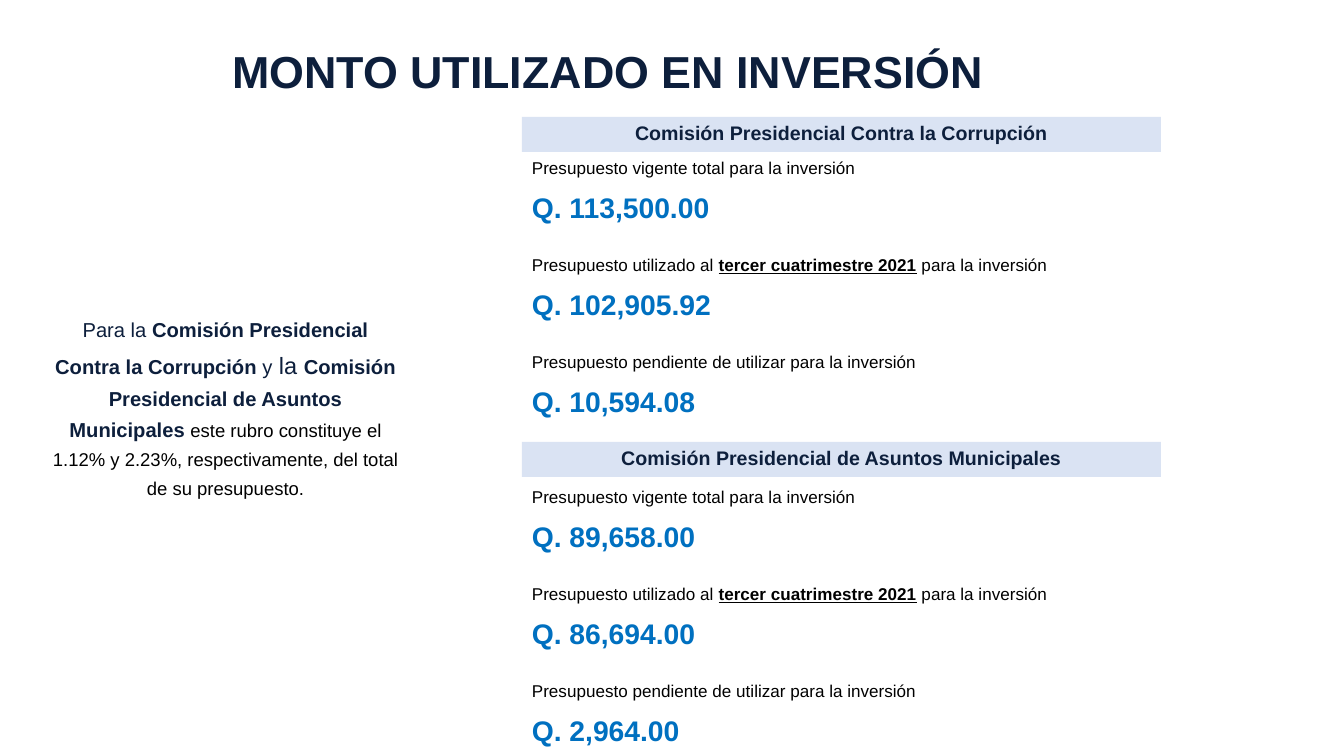
"""Build the slide on the amounts spent on investment by two commissions."""
from dataclasses import dataclass

from pptx import Presentation
from pptx.dml.color import RGBColor
from pptx.enum.shapes import MSO_SHAPE
from pptx.enum.text import MSO_ANCHOR, MSO_AUTO_SIZE, PP_ALIGN
from pptx.util import Pt

EMU_PER_PX = 914400 / 100.8
RECTANGLE = MSO_SHAPE.RECTANGLE
TOP, MIDDLE = MSO_ANCHOR.TOP, MSO_ANCHOR.MIDDLE
NO_AUTOFIT = MSO_AUTO_SIZE.NONE
CENTER, JUSTIFY = PP_ALIGN.CENTER, PP_ALIGN.JUSTIFY
TITLE_ONLY = 5
NAVY, BLUE, BLACK, BAND = "0D1F3C", "0070C0", "000000", "DAE3F3"
COLUMN_LEFT = 522


@dataclass
class Span:
    text: str
    size: float
    color: str = BLACK
    bold: bool = False
    underline: bool = False


@dataclass
class Commission:
    name: str
    band_top: int
    figures_top: int
    amounts: tuple[str, str, str]


LABELS = (
    [Span("Presupuesto vigente total para la inversión", 12.2)],
    [
        Span("Presupuesto utilizado al ", 12.2),
        Span("tercer cuatrimestre 2021", 12.2, bold=True, underline=True),
        Span(" para la inversión", 12.2),
    ],
    [Span("Presupuesto pendiente de utilizar para la inversión", 12.2)],
)
COMMISSIONS = (
    Commission("Comisión Presidencial Contra la Corrupción", 117, 146,
               ("Q. 113,500.00", "Q. 102,905.92", "Q. 10,594.08")),
    Commission("Comisión Presidencial de Asuntos Municipales", 442, 475,
               ("Q. 89,658.00", "Q. 86,694.00", "Q. 2,964.00")),
)
SUMMARY = [
    Span("Para la ", 14.4, NAVY),
    Span("Comisión Presidencial Contra la Corrupción ", 14.4, NAVY, True),
    Span("y", 14.4, NAVY),
    Span(" la ", 16.8, NAVY),
    Span("Comisión Presidencial de Asuntos Municipales ", 14.4, NAVY, True),
    Span("este rubro constituye el 1.12% y 2.23%, respectivamente, "
         "del total de su presupuesto.", 13.2),
]


def px(length: int) -> int:
    """Turn pixels into EMU."""
    return round(length * EMU_PER_PX)


def rgb(color: str) -> RGBColor:
    """Turn a hex string into a colour."""
    return RGBColor.from_string(color)


def set_font(font, span: Span) -> None:
    """Format a font as the span asks."""
    font.name = "Arial"
    font.size = Pt(span.size)
    font.bold = span.bold
    font.color.rgb = rgb(span.color)
    if span.underline:
        font.underline = True


def write(paragraph, spans: list[Span], alignment, line_spacing: float,
          space_before: float = 0) -> None:
    """Fill a paragraph with formatted spans."""
    paragraph.alignment = alignment
    paragraph.line_spacing = line_spacing
    paragraph.space_before = Pt(space_before)
    for span in spans:
        run = paragraph.add_run()
        run.text = span.text
        if len(spans) > 1:
            set_font(run.font, span)
    if len(spans) == 1:
        set_font(paragraph.font, spans[0])


def add_text_frame(slide, left: int, top: int, width: int, height: int, anchor):
    """Add a wrapping text box and return its text frame."""
    box = slide.shapes.add_textbox(px(left), px(top), px(width), px(height))
    box.text_frame.word_wrap = True
    box.text_frame.vertical_anchor = anchor
    return box.text_frame


def add_title(slide) -> None:
    """Place and write the slide title."""
    title = slide.shapes.title
    title.left, title.top, title.width, title.height = map(px, (31, 44, 1154, 60))
    title.text_frame.auto_size = NO_AUTOFIT
    title.text_frame.vertical_anchor = MIDDLE
    write(title.text_frame.paragraphs[0],
          [Span("MONTO UTILIZADO EN INVERSIÓN", 32, NAVY, True)], CENTER, 0.9)


def add_commission(slide, commission: Commission) -> None:
    """Add a heading band with the three budget figures below it."""
    band = slide.shapes.add_shape(RECTANGLE, px(COLUMN_LEFT),
                                  px(commission.band_top), px(639), px(35))
    band.shadow.inherit = False
    band.fill.solid()
    band.fill.fore_color.rgb = rgb(BAND)
    band.line.fill.background()
    band.text_frame.vertical_anchor = MIDDLE
    write(band.text_frame.paragraphs[0],
          [Span(commission.name, 14, NAVY, True)], CENTER, 0.9)

    frame = add_text_frame(slide, COLUMN_LEFT, commission.figures_top, 574, 270, TOP)
    for index, (label, amount) in enumerate(zip(LABELS, commission.amounts)):
        paragraph = frame.add_paragraph() if index else frame.paragraphs[0]
        write(paragraph, label, JUSTIFY, 1.3, 17.5 if index else 0)
        write(frame.add_paragraph(), [Span(amount, 20.2, BLUE, True)],
              JUSTIFY, 1.3, 1.5)


def main() -> None:
    """Build and save the presentation."""
    presentation = Presentation()
    presentation.slide_width, presentation.slide_height = px(1344), px(756)
    slide = presentation.slides.add_slide(presentation.slide_layouts[TITLE_ONLY])
    add_title(slide)
    summary = add_text_frame(slide, 42, 284, 367, 242, MIDDLE)
    write(summary.paragraphs[0], SUMMARY, CENTER, 1.3)
    for commission in COMMISSIONS:
        add_commission(slide, commission)
    presentation.save("out.pptx")


if __name__ == "__main__":
    main()
